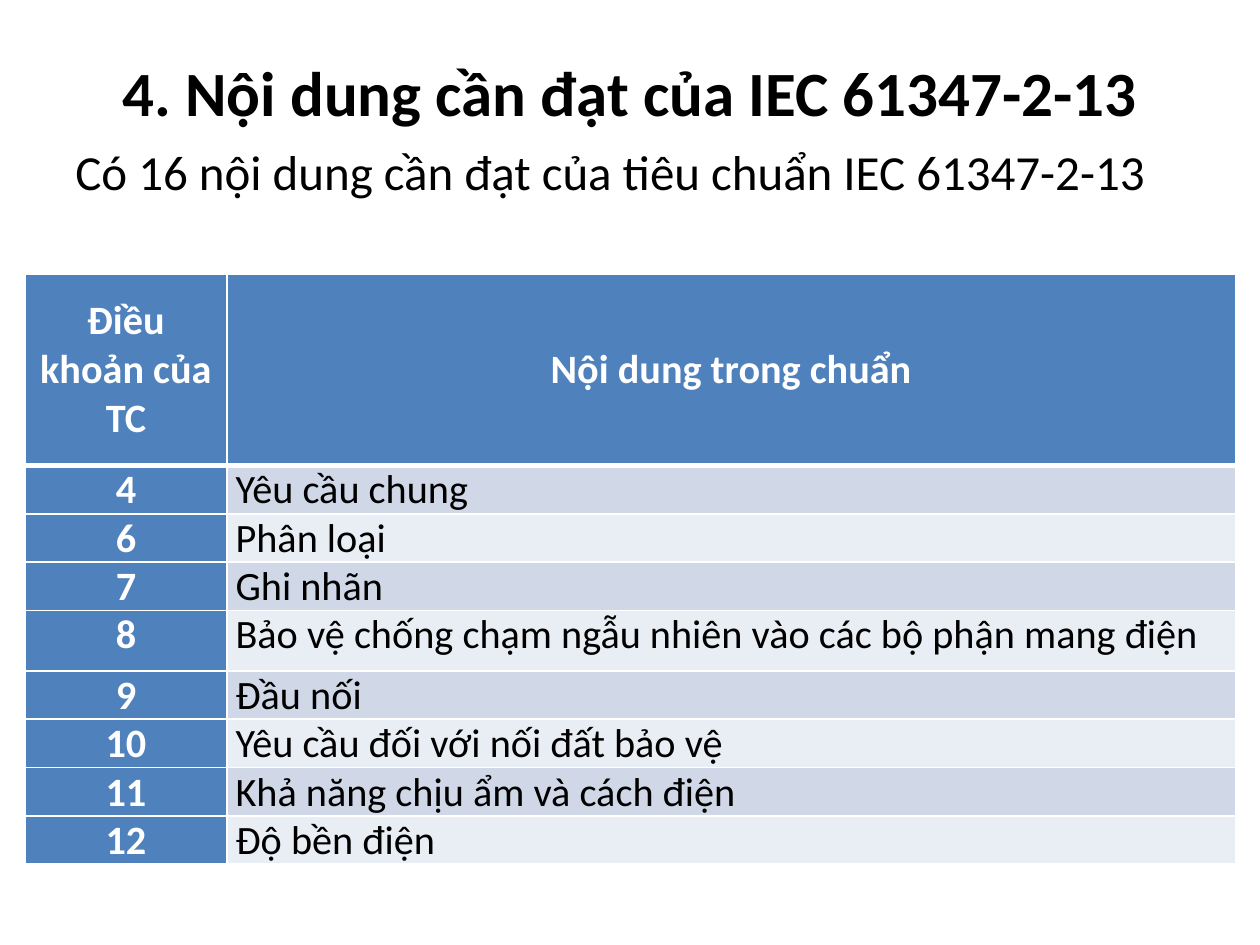
from dataclasses import dataclass

import pptx
import pptx.dml.color
import pptx.enum.text
import pptx.oxml
import pptx.oxml.ns
import pptx.util

ALIGN = pptx.enum.text.PP_ALIGN
ANCHOR = pptx.enum.text.MSO_ANCHOR
WIDTH = pptx.util.Inches(10)
HEIGHT = pptx.util.Inches(7.5)

BLACK, WHITE, BLUE = "000000", "FFFFFF", "4F81BD"
BANDS = ("D0D8E8", "E9EDF4")

HEADINGS = ("Điều khoản của TC", "Nội dung trong chuẩn")
CLAUSES = (
    ("4", "Yêu cầu chung"),
    ("6", "Phân loại"),
    ("7", "Ghi nhãn"),
    ("8", "Bảo vệ chống chạm ngẫu nhiên vào các bộ phận mang điện"),
    ("9", "Đầu nối"),
    ("10", "Yêu cầu đối với nối đất bảo vệ"),
    ("11", "Khả năng chịu ẩm và cách điện"),
    ("12", "Độ bền điện"),
)
COLUMN_WIDTHS = (1.6, 8.01)
HEADER_HEIGHT, ROW_HEIGHT, TALL_ROW_HEIGHT = 1.52, 0.38, 0.48
TALL_CLAUSE = "8"


@dataclass(frozen=True)
class Box:
    """A place on the slide, in shares of its width and height."""
    left: float
    top: float
    width: float
    height: float

    def emu(self) -> tuple[int, int, int, int]:
        return (int(self.left * WIDTH), int(self.top * HEIGHT),
                int(self.width * WIDTH), int(self.height * HEIGHT))


@dataclass(frozen=True)
class Style:
    size: float
    color: str = BLACK
    bold: bool = False
    align: ALIGN = ALIGN.LEFT
    anchor: ANCHOR = ANCHOR.TOP
    before: float = 0
    after: float = 0


@dataclass(frozen=True)
class TextBlock:
    text: str
    box: Box
    style: Style


TITLE = TextBlock("4. Nội dung cần đạt của IEC 61347-2-13",
                  Box(0.05, 0.04, 0.9, 0.113),
                  Style(36, bold=True, align=ALIGN.CENTER, anchor=ANCHOR.MIDDLE))
INTRO = TextBlock("Có 16 nội dung cần đạt của tiêu chuẩn IEC 61347-2-13",
                  Box(0.05, 0.143, 0.9, 0.75), Style(28, before=5.6))
TABLE_BOX = Box(0.02, 0.29, 0.961, 0.624)

HEADING = Style(23, WHITE, True, ALIGN.CENTER, ANCHOR.MIDDLE, 6, 6)
NUMBER = Style(23, WHITE, True, ALIGN.CENTER, before=6, after=6)
CONTENT = Style(23, before=6, after=6)


def rgb(color: str) -> pptx.dml.color.RGBColor:
    return pptx.dml.color.RGBColor.from_string(color)


def write(tf, text: str, style: Style) -> None:
    tf.word_wrap = True
    p = tf.paragraphs[0]
    p.alignment = style.align
    p.space_before = pptx.util.Pt(style.before)
    p.space_after = pptx.util.Pt(style.after)
    r = p.add_run()
    r.text = text
    r.font.name = "Calibri"
    r.font.size = pptx.util.Pt(style.size)
    r.font.bold = style.bold
    r.font.color.rgb = rgb(style.color)


def add_text(s, block: TextBlock) -> None:
    tf = s.shapes.add_textbox(*block.box.emu()).text_frame
    tf.vertical_anchor = block.style.anchor
    write(tf, block.text, block.style)


def set_borders(cell, top: float, bottom: float) -> None:
    """Draw white cell borders: 1 pt at the sides, given points above and below."""
    tc_pr = cell._tc.get_or_add_tcPr()
    for side, points in (("L", 1), ("R", 1), ("T", top), ("B", bottom)):
        tc_pr.append(pptx.oxml.parse_xml(
            f'<a:ln{side} {pptx.oxml.ns.nsdecls("a")} w="{pptx.util.Pt(points)}">'
            f'<a:solidFill><a:srgbClr val="{WHITE}"/></a:solidFill></a:ln{side}>'))


def fill_cell(cell, text: str, style: Style, fill: str,
              top: float = 1, bottom: float = 1) -> None:
    cell.margin_left = cell.margin_right = pptx.util.Inches(0.07)
    cell.margin_top = cell.margin_bottom = 0
    cell.vertical_anchor = style.anchor
    set_borders(cell, top, bottom)
    cell.fill.solid()
    cell.fill.fore_color.rgb = rgb(fill)
    write(cell.text_frame, text, style)


def add_clause_table(s) -> None:
    table = s.shapes.add_table(len(CLAUSES) + 1, len(HEADINGS), *TABLE_BOX.emu()).table
    table.first_row = table.horz_banding = False
    for column, width in zip(table.columns, COLUMN_WIDTHS):
        column.width = pptx.util.Inches(width)

    table.rows[0].height = pptx.util.Inches(HEADER_HEIGHT)
    for col, heading in enumerate(HEADINGS):
        fill_cell(table.cell(0, col), heading, HEADING, BLUE, bottom=3)

    for row, (number, content) in enumerate(CLAUSES, start=1):
        height = TALL_ROW_HEIGHT if number == TALL_CLAUSE else ROW_HEIGHT
        table.rows[row].height = pptx.util.Inches(height)
        top = 3 if row == 1 else 1
        fill_cell(table.cell(row, 0), number, NUMBER, BLUE, top)
        fill_cell(table.cell(row, 1), content, CONTENT, BANDS[(row - 1) % 2], top)


def main() -> None:
    prs = pptx.Presentation()
    prs.slide_width, prs.slide_height = WIDTH, HEIGHT
    s = prs.slides.add_slide(prs.slide_layouts[6])
    add_text(s, TITLE)
    add_text(s, INTRO)
    add_clause_table(s)
    prs.save("out.pptx")


if __name__ == "__main__":
    main()
